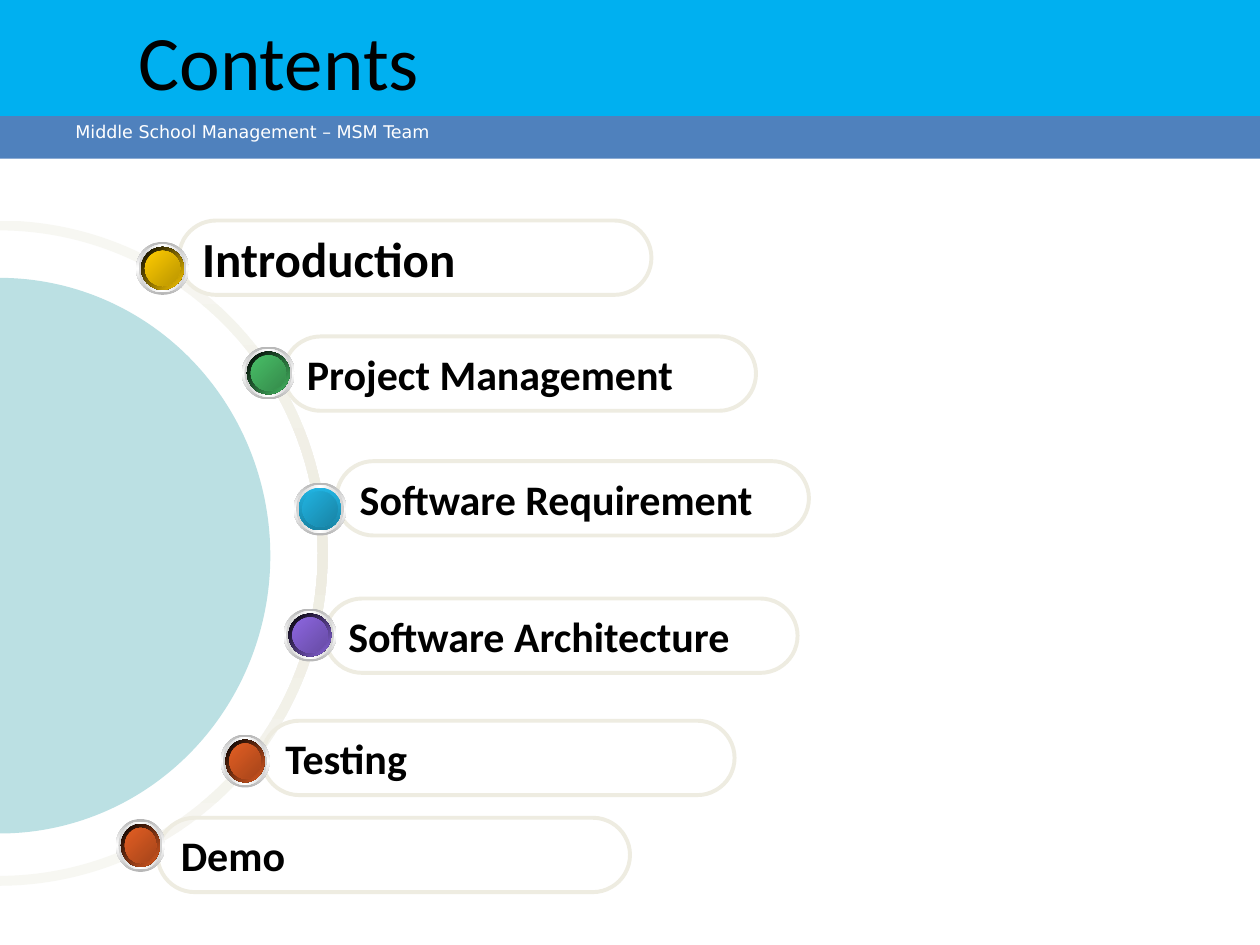
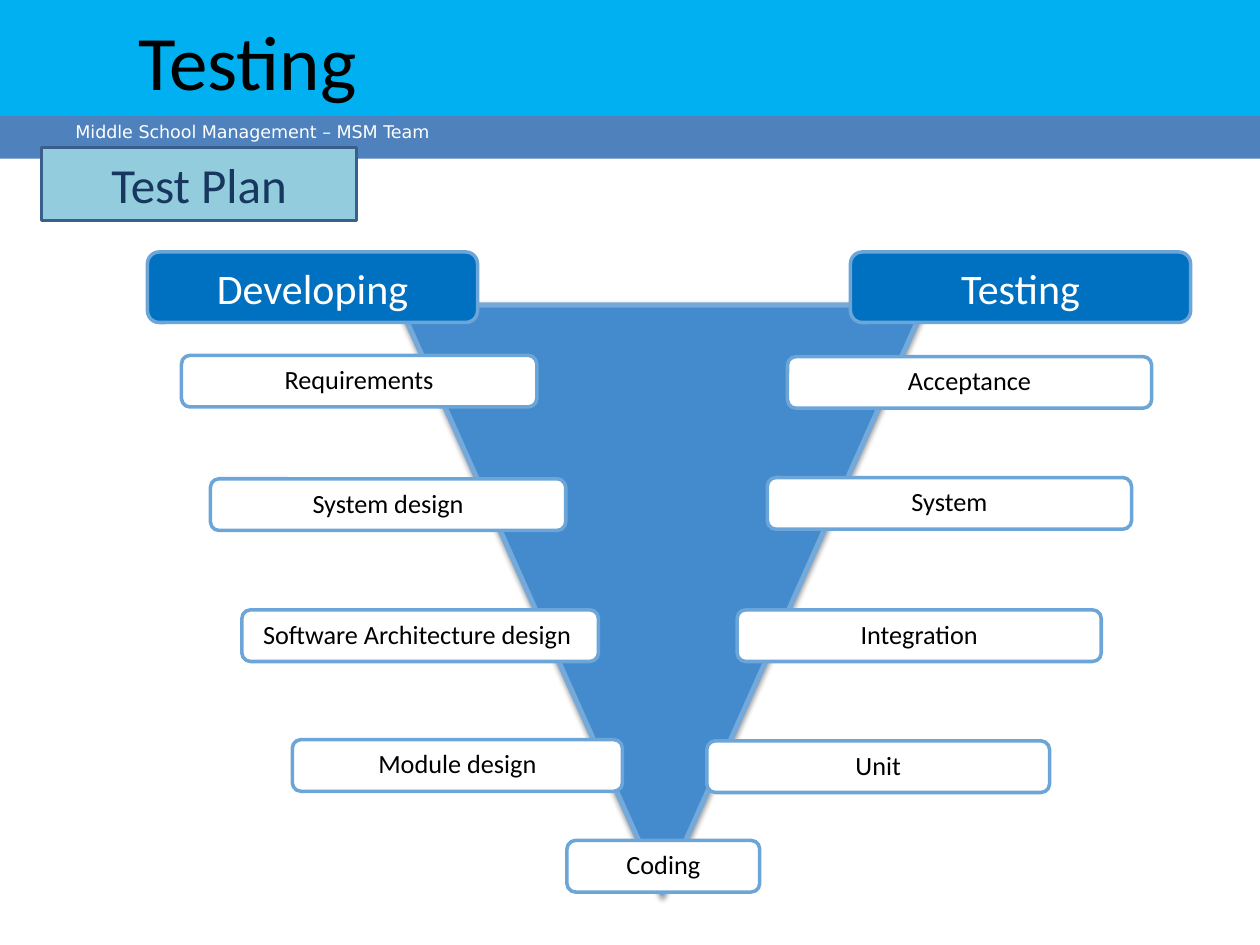
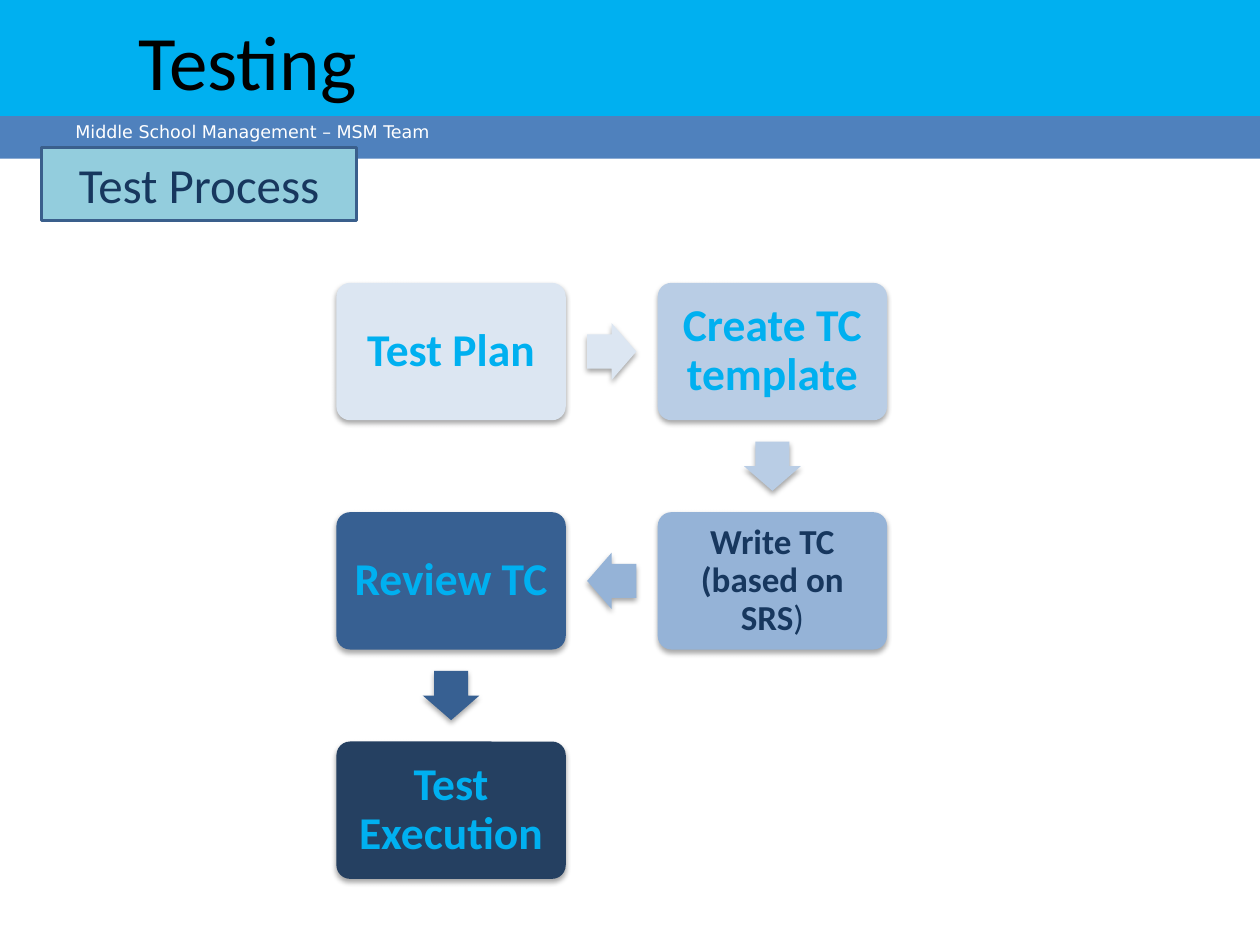
import math

import pptx
import pptx.dml.color
import pptx.enum.shapes
import pptx.enum.text
import pptx.oxml
import pptx.oxml.ns
import pptx.util

Inches = pptx.util.Inches
Pt = pptx.util.Pt
RGBColor = pptx.dml.color.RGBColor
SHAPE = pptx.enum.shapes.MSO_SHAPE
ALIGN = pptx.enum.text.PP_ALIGN
ANCHOR = pptx.enum.text.MSO_ANCHOR

BLACK = RGBColor(0x00, 0x00, 0x00)
WHITE = RGBColor(0xFF, 0xFF, 0xFF)
SKY = RGBColor(0x00, 0xB0, 0xF0)
BAND_BLUE = RGBColor(0x4F, 0x81, 0xBD)
NAVY = RGBColor(0x17, 0x37, 0x5E)
TAG_FILL = RGBColor(0x93, 0xCD, 0xDD)
TAG_LINE = RGBColor(0x3A, 0x5F, 0x8C)
CREAM = RGBColor(0xEE, 0xEC, 0xE1)
PALE_CREAM = RGBColor(0xF7, 0xF7, 0xF2)
DISC_TEAL = RGBColor(0xBB, 0xE0, 0xE3)
RIM_GREY = RGBColor(0xB6, 0xB6, 0xB6)
BEVEL_GREY = RGBColor(0xD1, 0xD1, 0xD1)
YELLOW, DARK_YELLOW = RGBColor(0xFF, 0xCC, 0x00), RGBColor(0xBA, 0x95, 0x00)
GREEN, DARK_GREEN = RGBColor(0x48, 0xBE, 0x67), RGBColor(0x35, 0x8B, 0x4B)
CYAN, DARK_CYAN = RGBColor(0x21, 0xB3, 0xE1), RGBColor(0x18, 0x83, 0xA4)
PURPLE, DARK_PURPLE = RGBColor(0x8D, 0x67, 0xE1), RGBColor(0x67, 0x4B, 0xA4)
ORANGE, DARK_ORANGE = RGBColor(0xE3, 0x5E, 0x23), RGBColor(0xA6, 0x45, 0x1A)
FUNNEL_BLUE = RGBColor(0x43, 0x8B, 0xCD)
FUNNEL_LINE = RGBColor(0x74, 0xA9, 0xDA)
LABEL_LINE = RGBColor(0x6C, 0xA5, 0xD8)
HEAD_BLUE = RGBColor(0x00, 0x70, 0xC0)
STEP_1 = RGBColor(0xDC, 0xE6, 0xF2)
STEP_2 = RGBColor(0xB9, 0xCD, 0xE5)
STEP_3 = RGBColor(0x95, 0xB3, 0xD7)
STEP_4 = RGBColor(0x37, 0x60, 0x92)
STEP_5 = RGBColor(0x25, 0x40, 0x61)

FOOTER = "Middle School Management – MSM Team"

# text, size, pill left and top, ball left, top and width, bright, dark, start and angle of the shade
TOPICS = [
    ("Introduction", 28, 1.42, 1.75, 1.08, 1.92, 0.42, YELLOW, DARK_YELLOW, (BLACK, YELLOW), 45),
    ("Project Management", 24, 2.25, 2.67, 1.92, 2.75, 0.42, GREEN, DARK_GREEN, (BLACK, GREEN), 45),
    ("Software Requirement", 24, 2.67, 3.66, 2.33, 3.83, 0.42, CYAN, DARK_CYAN,
     (CYAN, DARK_CYAN), 90),
    ("Software Architecture", 24, 2.58, 4.75, 2.25, 4.83, 0.42, PURPLE, DARK_PURPLE,
     (BLACK, PURPLE), 45),
    ("Testing", 24, 2.08, 5.72, 1.75, 5.83, 0.39, ORANGE, DARK_ORANGE, (BLACK, ORANGE), 45),
    ("Demo", 24, 1.25, 6.49, 0.92, 6.5, 0.39, ORANGE, DARK_ORANGE, (BLACK, ORANGE), 45),
]

# text, left, top, width
PHASES = [
    ("Acceptance", 6.25, 2.83, 2.89),
    ("System", 6.09, 3.79, 2.89),
    ("Integration", 5.85, 4.84, 2.89),
    ("Unit", 5.61, 5.88, 2.72),
    ("Requirements", 1.44, 2.82, 2.82),
    ("System design", 1.67, 3.8, 2.82),
    ("Software Architecture design ", 1.92, 4.84, 2.83),
    ("Module design", 2.32, 5.87, 2.62),
    ("Coding", 4.5, 6.67, 1.53),
]
BRANCHES = [("Developing", 1.17, 2.62), ("Testing", 6.75, 2.7)]

# text, column, row, fill, text format
BIG_STEP = dict(size=26, color=SKY, bold=True, inset=0.1)
STEPS = [
    ("Test Plan", 0, 0, STEP_1, BIG_STEP),
    ("Create TC template", 1, 0, STEP_2, BIG_STEP),
    ("Write TC (based on SRS", 1, 1, STEP_3,
     dict(size=20, color=NAVY, bold=True, inset=0.1, plain_end=")")),
    ("Review TC", 0, 1, STEP_4, BIG_STEP),
    ("Test Execution", 0, 2, STEP_5, BIG_STEP),
]


def write(box, text, *, size, color=BLACK, font="Calibri", bold=False, plain_end="",
          align=ALIGN.CENTER, anchor=ANCHOR.MIDDLE, spacing=None, inset=None, left_inset=None):
    frame = box.text_frame
    frame.word_wrap = True
    frame.vertical_anchor = anchor
    if inset is not None:
        frame.margin_left = frame.margin_right = Inches(inset)
        frame.margin_top = frame.margin_bottom = Inches(0.06)
    if left_inset is not None:
        frame.margin_left = Inches(left_inset)
    para = frame.paragraphs[0]
    para.alignment = align
    if spacing:
        para.line_spacing = spacing
    for words, heavy in ((text, bold), (plain_end, False)):
        if words:
            span = para.add_run()
            span.text = words
            span.font.name = font
            span.font.size = Pt(size)
            span.font.bold = heavy
            span.font.color.rgb = color


def add_box(page, kind, left, top, width, height, *, fill=None, line=None, line_width=2,
            adjustments=(), rotation=0):
    box = page.shapes.add_shape(kind, Inches(left), Inches(top), Inches(width), Inches(height))
    box.shadow.inherit = False
    box.rotation = rotation
    for i, value in enumerate(adjustments):
        box.adjustments[i] = value
    if fill is None:
        box.fill.background()
    else:
        box.fill.solid()
        box.fill.fore_color.rgb = fill
    if line is None:
        box.line.fill.background()
    else:
        box.line.color.rgb = line
        box.line.width = Pt(line_width)
    return box


def fill_gradient(shape, colors, angle):
    """Spread the colours evenly along an angle measured clockwise."""
    stops = "".join(
        f'<a:gs pos="{100000 * i // (len(colors) - 1)}"><a:srgbClr val="{color}"/></a:gs>'
        for i, color in enumerate(colors))
    shape.fill.gradient()
    old = shape.element.spPr.find(pptx.oxml.ns.qn("a:gradFill"))
    new = pptx.oxml.parse_xml(
        f'<a:gradFill {pptx.oxml.ns.nsdecls("a")} rotWithShape="1"><a:gsLst>{stops}</a:gsLst>'
        f'<a:lin ang="{angle * 60000}" scaled="1"/></a:gradFill>')
    old.getparent().replace(old, new)


def drop_shadow(shape, opacity, distance):
    effects = shape.element.spPr.find(pptx.oxml.ns.qn("a:effectLst"))
    effects.append(pptx.oxml.parse_xml(
        f'<a:outerShdw {pptx.oxml.ns.nsdecls("a")} blurRad="{Pt(3.1)}" dist="{Pt(distance)}" '
        f'dir="5400000" rotWithShape="0"><a:srgbClr val="{BLACK}">'
        f'<a:alpha val="{opacity * 1000}"/></a:srgbClr></a:outerShdw>'))


def start_page(deck, title, tag=None):
    page = deck.slides.add_slide(deck.slide_layouts[6])
    add_box(page, SHAPE.RECTANGLE, 0, 0.92, 10, 0.34, fill=BAND_BLUE)
    footer = page.shapes.add_textbox(Inches(0.5), Inches(0.83), Inches(4.25), Inches(0.35))
    write(footer, FOOTER, size=10, color=WHITE, font="DejaVu Sans", align=ALIGN.LEFT,
          anchor=ANCHOR.TOP, spacing=1.5)
    add_box(page, SHAPE.RECTANGLE, 0, 0, 10, 0.92, fill=SKY)
    heading = page.shapes.add_textbox(0, 0, Inches(9), Inches(0.95))
    write(heading, title, size=44, align=ALIGN.LEFT, left_inset=1.1)
    if tag:
        box = add_box(page, SHAPE.RECTANGLE, 0.33, 1.17, 2.5, 0.58, fill=TAG_FILL, line=TAG_LINE)
        write(box, tag, size=28, color=NAVY)
    return page


def add_ball(page, left, top, width, bright, dark, shade, shade_angle):
    layers = [
        (0, (RIM_GREY, WHITE, RIM_GREY), 90),
        (0.02, (BEVEL_GREY, WHITE, BEVEL_GREY), 0),
        (0.04, shade, shade_angle),
        (0.07, (bright, dark), 45),
    ]
    for inset, colors, angle in layers:
        disc = add_box(page, SHAPE.OVAL, left + inset, top + inset,
                       width - 2 * inset, 0.42 - 2 * inset)
        fill_gradient(disc, colors, angle)


def build_contents(deck):
    page = start_page(deck, "Contents")
    # Angles of an adjustment count 0.6 to the degree: 108 is 180 degrees.
    ring = add_box(page, SHAPE.BLOCK_ARC, -2.65, 1.78, 5.28, 5.22,
                   adjustments=(108, 0, 0.015), rotation=90)
    fill_gradient(ring, (PALE_CREAM, CREAM, PALE_CREAM), 0)
    add_box(page, SHAPE.CHORD, -2.21, 2.26, 4.41, 4.3, fill=DISC_TEAL,
            adjustments=(108, 0), rotation=90)
    for text, size, left, top, *ball in TOPICS:
        pill = add_box(page, SHAPE.ROUNDED_RECTANGLE, left, top, 3.75, 0.59,
                       line=CREAM, line_width=2.25, adjustments=(0.5,))
        write(pill, text, size=size, bold=True, align=ALIGN.LEFT)
        add_ball(page, *ball)


def build_test_plan(deck):
    page = start_page(deck, "Testing", "Test Plan")
    funnel = add_box(page, SHAPE.ISOSCELES_TRIANGLE, 3.17, 2.42, 4.17, 4.67,
                     fill=FUNNEL_BLUE, line=FUNNEL_LINE, line_width=3, rotation=180)
    drop_shadow(funnel, 38, 1.6)
    for text, left, top, width in PHASES:
        label = add_box(page, SHAPE.ROUNDED_RECTANGLE, left, top, width, 0.41,
                        fill=WHITE, line=LABEL_LINE)
        write(label, text, size=15, spacing=0.9, inset=0.06)
    for text, left, width in BRANCHES:
        head = add_box(page, SHAPE.ROUNDED_RECTANGLE, left, 2, width, 0.56,
                       fill=HEAD_BLUE, line=LABEL_LINE)
        write(head, text, size=24, color=WHITE)


def build_test_process(deck):
    page = start_page(deck, "Testing", "Test Process")
    width, height = 1.82, 1.09
    arrow_width, arrow_height = 0.39, 0.45
    centers = [(3.58 + 2.55 * column, 2.79 + 1.82 * row) for _, column, row, _, _ in STEPS]
    for i, (text, _, _, fill, text_format) in enumerate(STEPS):
        x, y = centers[i]
        step = add_box(page, SHAPE.ROUNDED_RECTANGLE, x - width / 2, y - height / 2,
                       width, height, fill=fill, adjustments=(0.1,))
        drop_shadow(step, 35, 1.8)
        write(step, text, spacing=0.9, **text_format)
        if i + 1 < len(STEPS):
            next_x, next_y = centers[i + 1]
            arrow = add_box(page, SHAPE.RIGHT_ARROW, (x + next_x - arrow_width) / 2,
                            (y + next_y - arrow_height) / 2, arrow_width, arrow_height,
                            fill=fill, adjustments=(0.6, 0.5),
                            rotation=math.degrees(math.atan2(next_y - y, next_x - x)))
            drop_shadow(arrow, 35, 1.8)


def main():
    deck = pptx.Presentation()
    deck.slide_width, deck.slide_height = Inches(10), Inches(7.5)
    build_contents(deck)
    build_test_plan(deck)
    build_test_process(deck)
    deck.save("out.pptx")


if __name__ == "__main__":
    main()
